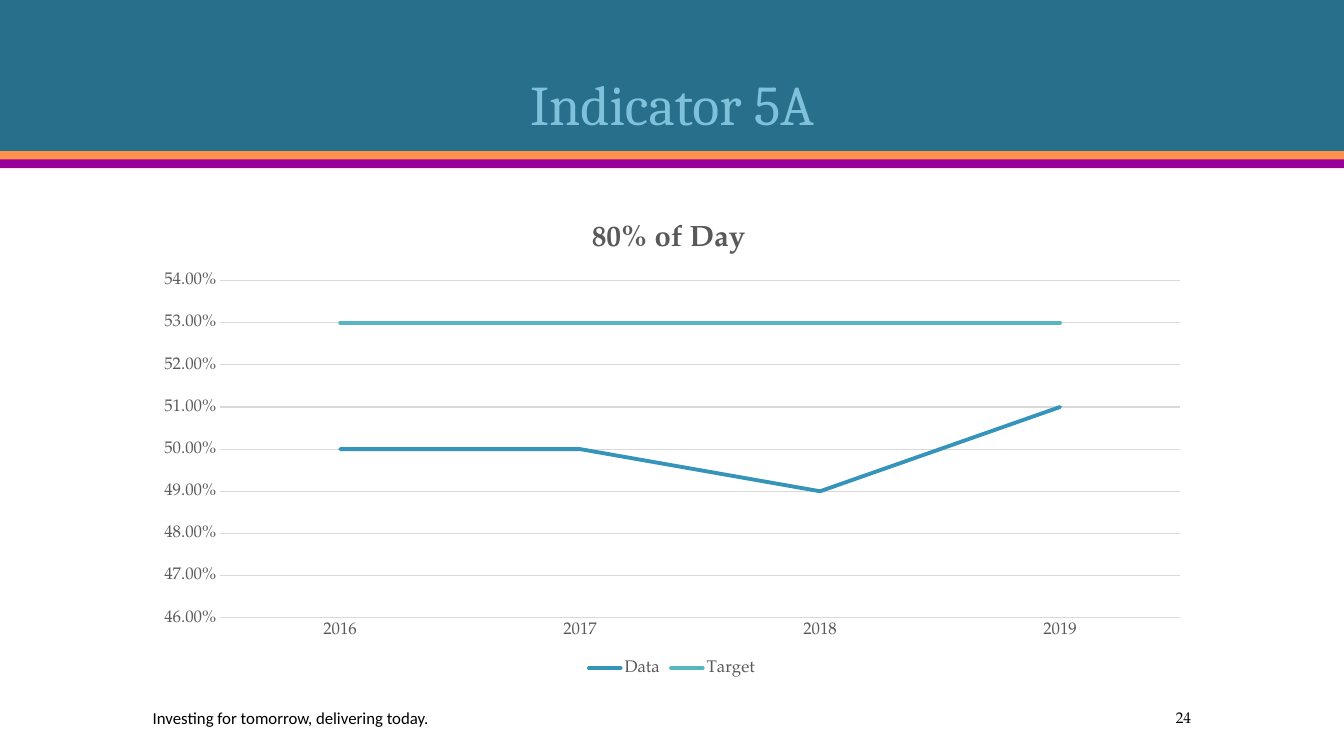
from dataclasses import dataclass

from lxml import etree
from pptx import Presentation
from pptx.chart import data as chart_data
from pptx.dml.color import RGBColor
from pptx.enum import chart as chart_enum, shapes, text
from pptx.oxml import ns
from pptx.util import Cm, Pt

TEAL = RGBColor(0x27, 0x6F, 0x8B)
ORANGE = RGBColor(0xFF, 0x91, 0x4D)
PURPLE = RGBColor(0x99, 0x00, 0x99)
SKY = RGBColor(0x7F, 0xC1, 0xDB)
BLUE = RGBColor(0x34, 0x94, 0xBA)
AQUA = RGBColor(0x58, 0xB6, 0xC0)
GRAY = RGBColor(0x59, 0x59, 0x59)
LIGHT_GRAY = RGBColor(0xD9, 0xD9, 0xD9)
BLACK = RGBColor(0, 0, 0)

BODY_FONT = "TeX Gyre Pagella"
SLIDE_WIDTH = Cm(33.87)
MARGIN = Cm(3.6)
CONTENT_WIDTH = SLIDE_WIDTH - 2 * MARGIN
CHART_HEIGHT = Cm(12.07)
FOOTER_TOP, FOOTER_HEIGHT = Cm(17.7), Cm(0.76)


@dataclass(frozen=True)
class Band:
    top: float
    height: float
    color: RGBColor


@dataclass(frozen=True)
class Series:
    name: str
    values: tuple[float, ...]
    color: RGBColor


BANDS = (Band(0, 3.81, TEAL), Band(3.81, 0.22, ORANGE), Band(4.02, 0.22, PURPLE))
YEARS = ("2016", "2017", "2018", "2019")
SERIES = (
    Series("Data", (0.5, 0.5, 0.49, 0.51), BLUE),
    Series("Target", (0.53,) * len(YEARS), AQUA),
)


def style_font(font, size: float, color: RGBColor, name: str = BODY_FONT,
               bold: bool = False) -> None:
    font.name, font.size, font.bold = name, Pt(size), bold
    font.color.rgb = color


def write(frame, wording: str, *, size: float, color: RGBColor = BLACK,
          font: str = BODY_FONT, bold: bool = False,
          align=text.PP_ALIGN.LEFT, anchor=text.MSO_ANCHOR.MIDDLE) -> None:
    frame.word_wrap = True
    frame.vertical_anchor = anchor
    paragraph = frame.paragraphs[0]
    paragraph.alignment = align
    run = paragraph.add_run()
    run.text = wording
    style_font(run.font, size, color, font, bold)


def draw_band(slide, band: Band) -> None:
    stripe = slide.shapes.add_shape(shapes.MSO_SHAPE.RECTANGLE, 0, Cm(band.top),
                                    SLIDE_WIDTH, Cm(band.height))
    stripe.shadow.inherit = False
    stripe.fill.solid()
    stripe.fill.fore_color.rgb = band.color
    stripe.line.fill.background()


def set_layout(parent, **lengths: int) -> None:
    """Fix the place of a chart part, measured from the chart's top left corner."""
    layout = parent.find(ns.qn("c:layout"))
    if layout is None:
        layout = etree.Element(ns.qn("c:layout"))
        heading = parent.find(ns.qn("c:tx"))
        parent.insert(0 if heading is None else 1, layout)
    for child in list(layout):
        layout.remove(child)
    manual = etree.SubElement(layout, ns.qn("c:manualLayout"))
    if "w" in lengths:
        etree.SubElement(manual, ns.qn("c:layoutTarget")).set("val", "inner")
    for mode in ("xMode", "yMode"):
        etree.SubElement(manual, ns.qn(f"c:{mode}")).set("val", "edge")
    for key, length in lengths.items():
        whole = CONTENT_WIDTH if key in "xw" else CHART_HEIGHT
        etree.SubElement(manual, ns.qn(f"c:{key}")).set("val", str(length / whole))


def draw_chart(slide) -> None:
    figures = chart_data.CategoryChartData(number_format="0.00%")
    figures.categories = YEARS
    for series in SERIES:
        figures.add_series(series.name, series.values)
    chart = slide.shapes.add_chart(chart_enum.XL_CHART_TYPE.LINE, MARGIN, Cm(5.08),
                                   CONTENT_WIDTH, CHART_HEIGHT, figures).chart
    style_font(chart.font, 10, BLACK)

    chart.has_title = True
    write(chart.chart_title.text_frame, "80% of Day", size=21, color=GRAY,
          bold=True, align=text.PP_ALIGN.CENTER)
    chart.chart_title.include_in_layout = False
    set_layout(chart.chart_title._element, x=Cm(11.18), y=Cm(0.37))
    set_layout(chart.plots[0]._element.getparent(),
               x=Cm(1.95), y=Cm(1.99), w=Cm(24.19), h=Cm(8.5))

    chart.has_legend = True
    chart.legend.position = chart_enum.XL_LEGEND_POSITION.BOTTOM
    chart.legend.include_in_layout = False
    style_font(chart.legend.font, 12, GRAY)

    for axis in (chart.category_axis, chart.value_axis):
        axis.major_tick_mark = axis.minor_tick_mark = chart_enum.XL_TICK_MARK.NONE
        style_font(axis.tick_labels.font, 12, GRAY)
    chart.category_axis.format.line.color.rgb = LIGHT_GRAY
    chart.category_axis.format.line.width = Pt(1)

    percent = chart.value_axis
    percent.minimum_scale, percent.maximum_scale, percent.major_unit = 0.46, 0.54, 0.01
    percent.tick_labels.number_format = "0.00%"
    percent.tick_labels.number_format_is_linked = False
    percent.format.line.fill.background()
    percent.major_gridlines.format.line.color.rgb = LIGHT_GRAY
    percent.major_gridlines.format.line.width = Pt(0.75)

    chart.plots[0].vary_by_categories = False
    for line, series in zip(chart.plots[0].series, SERIES):
        line.smooth = False
        line.marker.style = chart_enum.XL_MARKER_STYLE.NONE
        line.format.line.color.rgb = series.color
        line.format.line.width = Pt(2.75)
        line._element.find(f"{ns.qn('c:spPr')}/{ns.qn('a:ln')}").set("cap", "rnd")


def main() -> None:
    deck = Presentation()
    deck.slide_width, deck.slide_height = SLIDE_WIDTH, Cm(19.05)
    slide = deck.slides.add_slide(deck.slide_layouts[5])

    for band in BANDS:
        draw_band(slide, band)

    heading = slide.shapes.title
    slide.shapes._spTree.append(heading._element)  # in front of the bands
    heading.left, heading.top = MARGIN, Cm(0.73)
    heading.width, heading.height = CONTENT_WIDTH, Cm(2.87)
    write(heading.text_frame, "Indicator 5A", size=40, color=SKY, font="Cambria",
          align=text.PP_ALIGN.CENTER, anchor=text.MSO_ANCHOR.BOTTOM)
    heading.text_frame.paragraphs[0].line_spacing = 0.9

    draw_chart(slide)

    motto = slide.shapes.add_textbox(MARGIN, FOOTER_TOP, Cm(17.35), FOOTER_HEIGHT)
    write(motto.text_frame, "Investing for tomorrow, delivering today.", size=12,
          font="Calibri")
    number_width = Cm(3.81)
    page_number = slide.shapes.add_textbox(SLIDE_WIDTH - MARGIN - number_width,
                                           FOOTER_TOP, number_width, FOOTER_HEIGHT)
    write(page_number.text_frame, "24", size=11, align=text.PP_ALIGN.RIGHT)

    deck.save("out.pptx")


if __name__ == "__main__":
    main()
